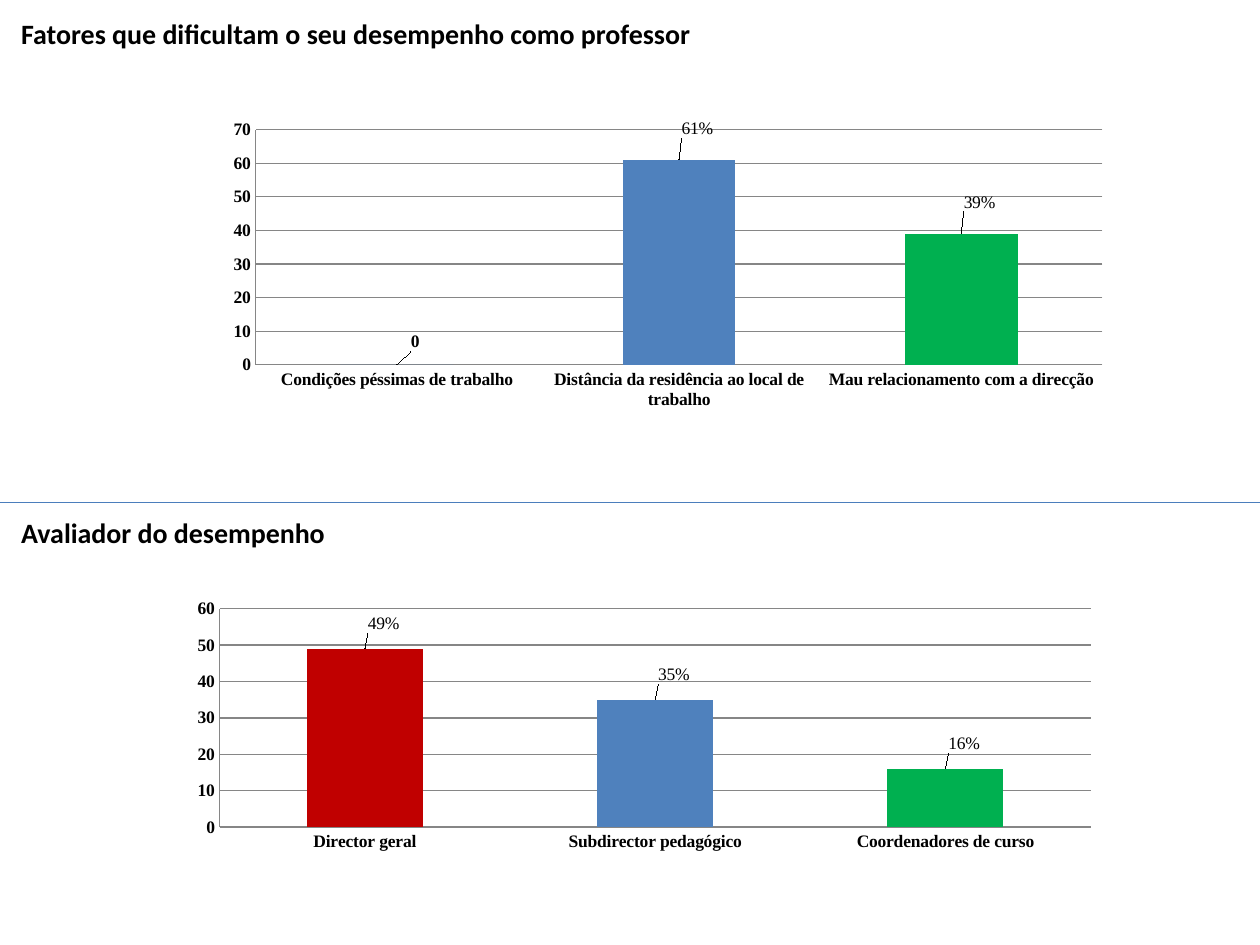
from lxml.etree import SubElement
from pptx import Presentation
from pptx.chart.data import CategoryChartData
from pptx.dml.color import RGBColor
from pptx.enum.chart import XL_CHART_TYPE, XL_LABEL_POSITION, XL_TICK_MARK
from pptx.enum.shapes import MSO_CONNECTOR
from pptx.enum.text import MSO_AUTO_SIZE
from pptx.oxml import parse_xml
from pptx.oxml.ns import nsdecls, qn
from pptx.util import Inches, Pt

COLORS = {
    "text": "000000", "divider": "4B7EBC", "grid": "868686",
    "blue": "4F81BD", "green": "00B050", "red": "C00000",
}

SECTIONS = [
    {
        "title": "Fatores que dificultam o seu desempenho como professor",
        "title_box": (0.07, 0.08, 9.26, 0.37),
        "chart_box": (1.61, 0.45, 7.24, 3.37),
        "plot": (0.058, 0.172, 0.928, 0.554),
        "maximum": 70,
        "bars": [
            ("Condições péssimas de trabalho", 0, "blue", None, (0.02, -0.02)),
            ("Distância da residência ao local de trabalho", 61, "blue", "61%", (0.02, -0.04)),
            ("Mau relacionamento com a direcção", 39, "green", "39%", (0.02, -0.04)),
        ],
    },
    {
        "title": "Avaliador do desempenho",
        "title_box": (0.07, 4.04, 3.22, 0.37),
        "chart_box": (1.3, 4.4, 7.4, 2.68),
        "plot": (0.06, 0.161, 0.934, 0.647),
        "maximum": 60,
        "bars": [
            ("Director geral", 49, "red", "49%", (0.02, -0.03)),
            ("Subdirector pedagógico", 35, "blue", "35%", (0.02, -0.03)),
            ("Coordenadores de curso", 16, "green", "16%", (0.02, -0.03)),
        ],
    },
]


def style_font(font, name, size, bold):
    values = {"name": name, "size": Pt(size), "bold": bold}
    for attribute, value in values.items():
        setattr(font, attribute, value)
    font.color.rgb = RGBColor.from_string(COLORS["text"])


def manual_layout(settings):
    layout = parse_xml(f"<c:layout {nsdecls('c')}/>")
    manual = SubElement(layout, qn("c:manualLayout"))
    for tag, value in settings.items():
        SubElement(manual, qn(f"c:{tag}")).set("val", str(value))
    return layout


presentation = Presentation()
presentation.slide_width = Inches(10)
presentation.slide_height = Inches(7.5)
slide = presentation.slides.add_slide(presentation.slide_layouts[6])

divider = slide.shapes.add_connector(
    MSO_CONNECTOR.STRAIGHT, Inches(10), Inches(3.99), Inches(0), Inches(3.99)
)
divider.line.color.rgb = RGBColor.from_string(COLORS["divider"])
divider.line.width = Pt(0.75)
SubElement(divider._element.spPr, qn("a:effectLst"))

for section in SECTIONS:
    title = slide.shapes.add_textbox(*map(Inches, section["title_box"]))
    title.text_frame.word_wrap = True
    title.text_frame.auto_size = MSO_AUTO_SIZE.SHAPE_TO_FIT_TEXT
    run = title.text_frame.paragraphs[0].add_run()
    run.text = section["title"]
    style_font(run.font, "Calibri", 16, True)

    data = CategoryChartData()
    data.categories = [bar[0] for bar in section["bars"]]
    data.add_series("Series 1", [bar[1] for bar in section["bars"]])
    chart = slide.shapes.add_chart(
        XL_CHART_TYPE.COLUMN_CLUSTERED, *map(Inches, section["chart_box"]), data
    ).chart
    chart.has_title = False
    chart.has_legend = False
    style_font(chart.font, "Times New Roman", 10, True)

    plot_area = chart._chartSpace.chart.plotArea
    for layout in plot_area.findall(qn("c:layout")):
        plot_area.remove(layout)
    settings = {"layoutTarget": "inner", "xMode": "edge", "yMode": "edge"}
    settings.update(zip("xywh", section["plot"]))
    plot_area.insert(0, manual_layout(settings))

    for axis in (chart.category_axis, chart.value_axis):
        axis.major_tick_mark = XL_TICK_MARK.NONE
        axis.minor_tick_mark = XL_TICK_MARK.NONE
        axis.format.line.color.rgb = RGBColor.from_string(COLORS["grid"])
        axis.format.line.width = Pt(0.75)
    value_axis = chart.value_axis
    axis_values = {
        "minimum_scale": 0, "maximum_scale": section["maximum"],
        "major_unit": 10, "has_major_gridlines": True,
    }
    for attribute, value in axis_values.items():
        setattr(value_axis, attribute, value)
    gridline = value_axis.major_gridlines.format.line
    gridline.color.rgb = RGBColor.from_string(COLORS["grid"])
    gridline.width = Pt(0.75)

    plot = chart.plots[0]
    plot.gap_width = 150
    plot.vary_by_categories = False
    series = plot.series[0]
    series.format.fill.solid()
    series.format.fill.fore_color.rgb = RGBColor.from_string(COLORS["blue"])
    series.data_labels.show_value = True

    for index, (category, value, color, label_text, offset) in enumerate(section["bars"]):
        point = series.points[index]
        if color != "blue":
            point.format.fill.solid()
            point.format.fill.fore_color.rgb = RGBColor.from_string(COLORS[color])
        label = point.data_label
        if label_text:
            label_run = label.text_frame.paragraphs[0].add_run()
            label_run.text = label_text
            style_font(label_run.font, "Times New Roman", 10, False)
        label.position = XL_LABEL_POSITION.OUTSIDE_END
        label_element = series.data_labels._element.findall(qn("c:dLbl"))[index]
        label_element.insert(1, manual_layout(dict(zip("xy", offset))))

presentation.save("out.pptx")
